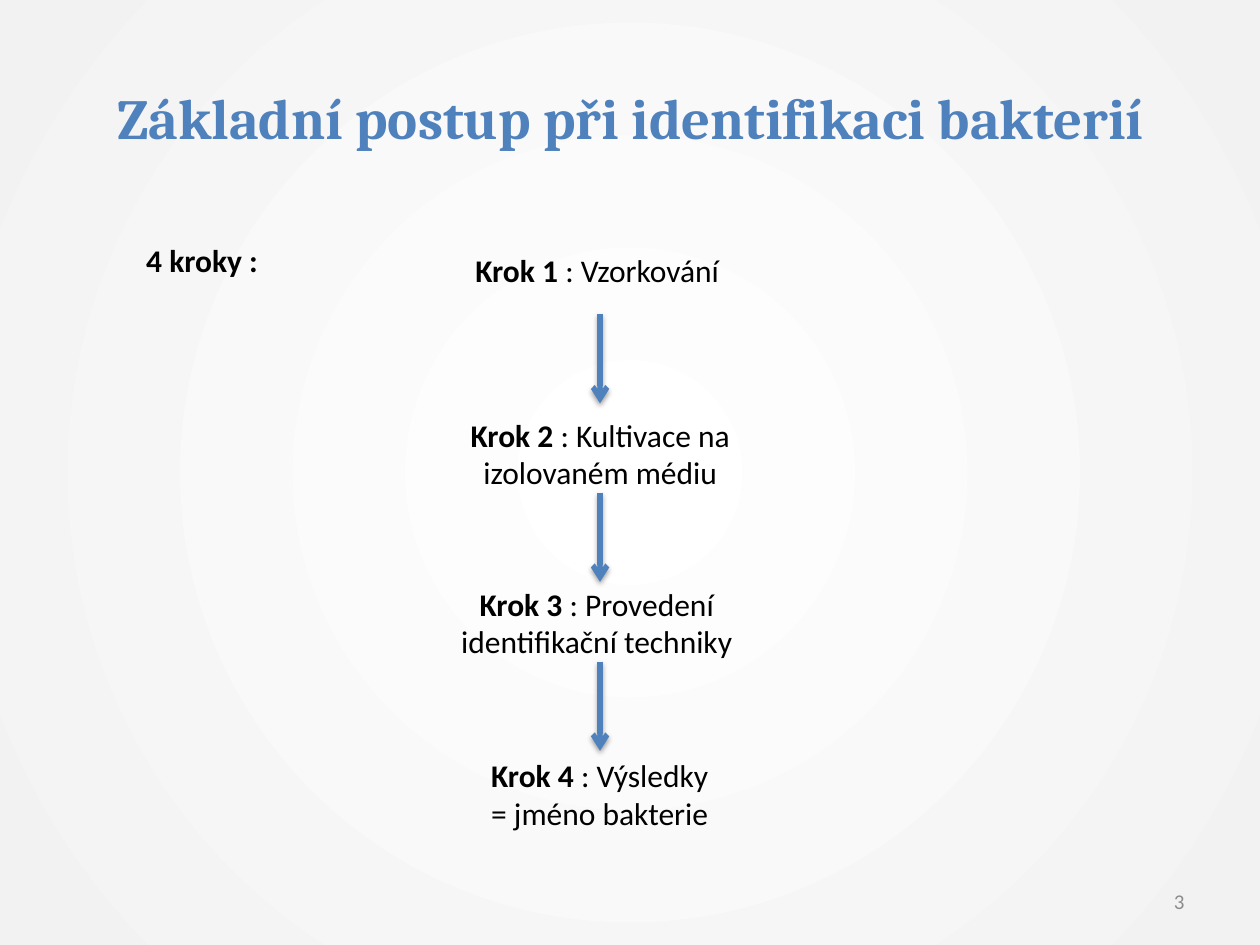
from pptx import Presentation
from pptx.dml.color import RGBColor
from pptx.enum.shapes import MSO_CONNECTOR
from pptx.enum.text import MSO_ANCHOR, PP_ALIGN
from pptx.oxml import parse_xml
from pptx.oxml.ns import nsdecls
from pptx.util import Pt

COLORS = {"blue": "4F81BD", "black": "000000", "gray": "8C8C8C",
          "inner": "FFFFFF", "outer": "F2F2F2"}


def color(name):
    """Return the named colour."""
    return RGBColor.from_string(COLORS[name])


def paint(slide):
    """Fill the background with a round gradient."""
    stops = "".join(
        f'<a:gs pos="{pos}"><a:srgbClr val="{COLORS[name]}"/></a:gs>'
        for pos, name in ((0, "inner"), (100000, "outer")))
    back = parse_xml(
        f'<p:bg {nsdecls("p", "a")}><p:bgPr><a:gradFill rotWithShape="1">'
        f'<a:gsLst>{stops}</a:gsLst><a:path path="circle">'
        '<a:fillToRect l="50000" t="50000" r="50000" b="50000"/></a:path>'
        '</a:gradFill><a:effectLst/></p:bgPr></p:bg>')
    slide.element.cSld.insert(0, back)


def style(run, size, tint="black", bold=False, face="Calibri"):
    """Set the font of a run."""
    font = run.font
    font.name, font.size, font.bold = face, Pt(size), bold
    font.color.rgb = color(tint)


def add_box(slide, left, top, width, height, align, anchor=MSO_ANCHOR.TOP):
    """Add a wrapping text box and return its frame."""
    frame = slide.shapes.add_textbox(
        Pt(left), Pt(top), Pt(width), Pt(height)).text_frame
    frame.word_wrap = True
    frame.vertical_anchor = anchor
    frame.paragraphs[0].alignment = align
    return frame


def add_label(slide, text, place, align, anchor, **look):
    """Add a box with one styled line."""
    frame = add_box(slide, *place, align, anchor)
    part = frame.paragraphs[0]
    part.text = text
    style(part.runs[0], **look)


def add_step(slide, number, lines, mid, top, width):
    """Add a step with its bold number, centred on mid."""
    frame = add_box(slide, mid - width / 2, top, width, 72, PP_ALIGN.CENTER)
    first = frame.paragraphs[0]
    first.text = f"Krok {number}"
    style(first.runs[0], 18, bold=True)
    rest = first.add_run()
    rest.text = f" : {lines[0]}"
    style(rest, 18)
    for line in lines[1:]:
        para = frame.add_paragraph()
        para.text = line
        para.alignment = PP_ALIGN.CENTER
        style(para.runs[0], 18)


def add_arrow(slide, left, top, length):
    """Add a downward arrow with a soft shadow."""
    arrow = slide.shapes.add_connector(
        MSO_CONNECTOR.STRAIGHT, Pt(left), Pt(top), Pt(left), Pt(top + length))
    arrow.line.color.rgb = color("blue")
    arrow.line.width = Pt(3)
    arrow.line._get_or_add_ln().append(
        parse_xml(f'<a:tailEnd {nsdecls("a")} type="arrow"/>'))
    arrow._element.spPr.append(parse_xml(
        f'<a:effectLst {nsdecls("a")}><a:outerShdw blurRad="{Pt(3.1)}" '
        f'dist="{Pt(1.6)}" dir="5400000" rotWithShape="0">'
        f'<a:srgbClr val="{COLORS["black"]}"><a:alpha val="38000"/></a:srgbClr>'
        '</a:outerShdw></a:effectLst>'))


def main():
    """Build the slide and save it."""
    deck = Presentation()
    deck.slide_width, deck.slide_height = Pt(720), Pt(540)
    slide = deck.slides.add_slide(deck.slide_layouts[6])
    paint(slide)
    add_label(slide, "Základní postup při identifikaci bakterií",
              (36, 21.6, 648, 90), PP_ALIGN.CENTER, MSO_ANCHOR.MIDDLE,
              size=32.4, tint="blue", bold=True, face="Cambria")
    add_label(slide, "4 kroky :", (76.5, 134, 86, 29), PP_ALIGN.LEFT,
              MSO_ANCHOR.TOP, size=18, bold=True)
    steps = (
        (("Vzorkování",), 341.3, 139.7, 155.5),
        (("Kultivace na izolovaném médiu",), 343, 234, 215.3),
        (("Provedení identifikační techniky",), 341, 330.5, 209.5),
        (("Výsledky", "= jméno bakterie"), 342.7, 428.4, 139.7),
    )
    for number, step in enumerate(steps, 1):
        add_step(slide, number, *step)
    for top in (179.5, 281.5, 378):
        add_arrow(slide, 342.9, top, 51)
    add_label(slide, "3", (516, 500.5, 168, 28.8), PP_ALIGN.RIGHT,
              MSO_ANCHOR.MIDDLE, size=12, tint="gray")
    deck.save("out.pptx")


if __name__ == "__main__":
    main()
